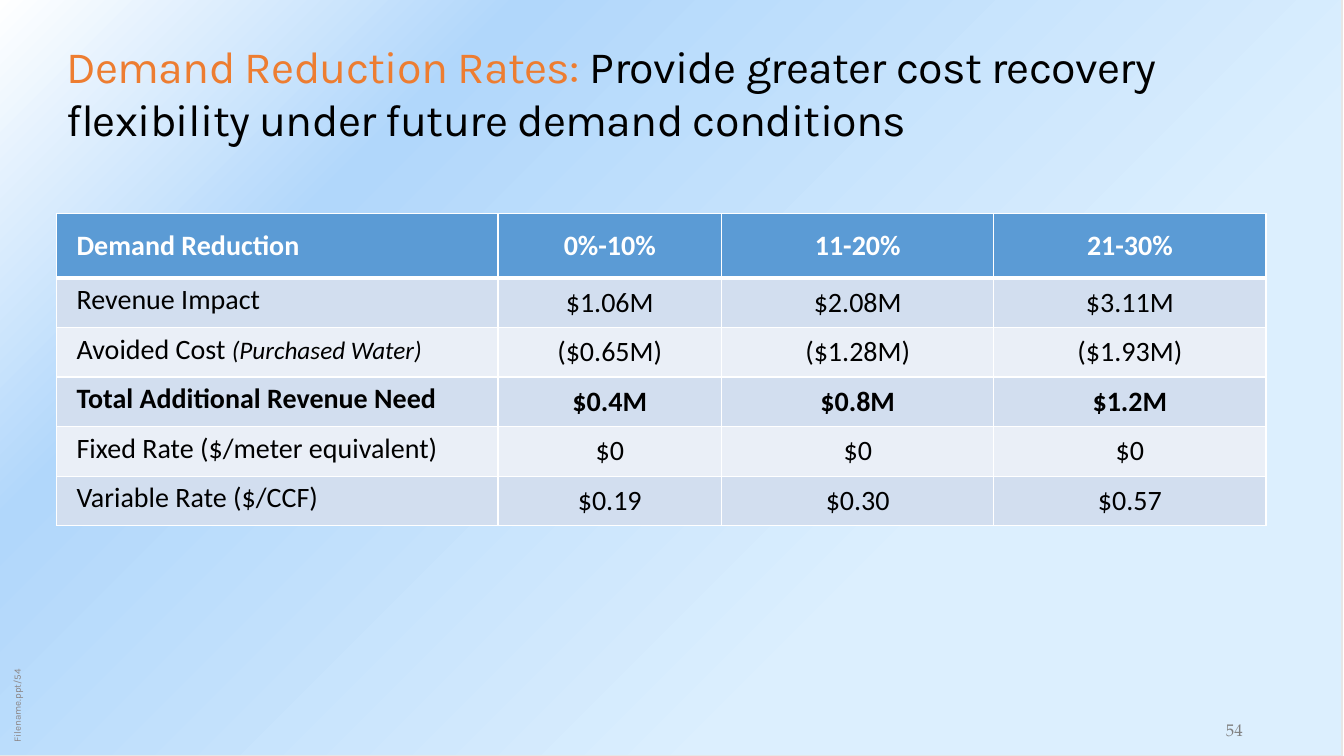
from lxml.etree import SubElement
from pptx import Presentation
from pptx.dml.color import RGBColor
from pptx.enum.shapes import MSO_SHAPE
from pptx.enum.text import MSO_ANCHOR, PP_ALIGN
from pptx.oxml import parse_xml
from pptx.oxml.ns import nsdecls, qn
from pptx.util import Pt

BLACK = "000000"
WHITE = "FFFFFF"
HEADER_BLUE = "5B9BD5"
BANDS = ["D2DEEF", "EAEFF7"]
TABLE_TOP = 152.6
HEADER_HEIGHT = 46
ROW_HEIGHT = 35.4
TOTAL_ROW = 3

LABELS = [
    "Demand Reduction",
    "Revenue Impact",
    "Avoided Cost |(Purchased Water)",
    "Total Additional Revenue Need",
    "Fixed Rate ($/meter equivalent)",
    "Variable Rate ($/CCF)",
]
LOW = ["0%-10%", "$1.06M", "($0.65M)", "$0.4M", "$0", "$0.19"]
MIDDLE = ["11-20%", "$2.08M", "($1.28M)", "$0.8M", "$0", "$0.30"]
HIGH = ["21-30%", "$3.11M", "($1.93M)", "$1.2M", "$0", "$0.57"]


def rgb(color):
    return RGBColor.from_string(color)


def set_font(font, name, size, color):
    font.name = name
    font.size = Pt(size)
    font.color.rgb = rgb(color)


def add_background(slide):
    backdrop = slide.shapes.add_shape(
        MSO_SHAPE.RECTANGLE, Pt(-1.4), Pt(0), Pt(960), Pt(540))
    backdrop.shadow.inherit = False
    backdrop.line.color.rgb = rgb("E7E6E6")
    backdrop.line.width = Pt(0.75)
    stops = "".join(
        f'<a:gs pos="{position * 1000}"><a:srgbClr val="{color}"/></a:gs>'
        for position, color in [(30, "DCEFFE"), (75, "B1D7FB"), (100, WHITE)])
    gradient = parse_xml(
        f'<a:gradFill {nsdecls("a")} rotWithShape="1"><a:gsLst>{stops}</a:gsLst>'
        '<a:path path="circle"><a:fillToRect l="100000" t="100000"/></a:path>'
        '</a:gradFill>')
    backdrop.element.spPr.find(qn("a:prstGeom")).addnext(gradient)


def add_text_frame(slide, left, top, width, height, rotation=0):
    box = slide.shapes.add_textbox(Pt(left), Pt(top), Pt(width), Pt(height))
    box.rotation = rotation
    box.text_frame.word_wrap = True
    return box.text_frame


def add_title(slide, lead, statement):
    frame = add_text_frame(slide, 40.3, 23.8, 880, 84)
    for text, color in [(lead, "ED7D31"), (statement, BLACK)]:
        run = frame.paragraphs[0].add_run()
        run.text = text
        set_font(run.font, "Karla", 32, color)
        run.font._element.set("spc", "-50")


def add_footer(slide, text, place, font, align=PP_ALIGN.LEFT, rotation=0):
    frame = add_text_frame(slide, *place, rotation)
    frame.vertical_anchor = MSO_ANCHOR.BOTTOM
    frame.margin_left = frame.margin_right = Pt(3.6)
    frame.margin_top = frame.margin_bottom = Pt(3.6)
    paragraph = frame.paragraphs[0]
    paragraph.text = text
    paragraph.alignment = align
    set_font(paragraph.font, *font)


def add_borders(cell, bottom_width):
    properties = cell._tc.get_or_add_tcPr()
    for side, width in [("L", 1), ("R", 1), ("T", 1), ("B", bottom_width)]:
        line = SubElement(properties, qn(f"a:ln{side}"), w=str(Pt(width)))
        fill = SubElement(line, qn("a:solidFill"))
        SubElement(fill, qn("a:srgbClr"), val=WHITE)


def fill_cell(cell, text, row, is_label):
    is_header = row == 0
    add_borders(cell, 3 if is_header else 1)
    cell.fill.solid()
    cell.fill.fore_color.rgb = rgb(HEADER_BLUE if is_header else BANDS[(row - 1) % 2])
    padded = is_header or is_label
    cell.margin_left = cell.margin_right = Pt(14.4 if padded else 0)
    cell.margin_top = cell.margin_bottom = Pt(3.6 if padded else 0)
    top_aligned = is_label and not is_header
    cell.vertical_anchor = MSO_ANCHOR.TOP if top_aligned else MSO_ANCHOR.MIDDLE
    paragraph = cell.text_frame.paragraphs[0]
    paragraph.alignment = PP_ALIGN.LEFT if is_label else PP_ALIGN.CENTER
    set_font(paragraph.font, "Calibri", 20, WHITE if is_header else BLACK)
    paragraph.font.bold = row in (0, TOTAL_ROW)
    main_text, _, note = text.partition("|")
    paragraph.add_run().text = main_text
    if note:
        note_run = paragraph.add_run()
        note_run.text = note
        note_run.font.size = Pt(18)
        note_run.font.italic = True


def add_rate_table(slide, left, widths, columns):
    row_count = len(columns[0])
    height = HEADER_HEIGHT + ROW_HEIGHT * (row_count - 1)
    table = slide.shapes.add_table(
        row_count, len(columns), Pt(left), Pt(TABLE_TOP),
        Pt(sum(widths)), Pt(height)).table
    for row in range(row_count):
        table.rows[row].height = Pt(ROW_HEIGHT if row else HEADER_HEIGHT)
    for index, (width, texts) in enumerate(zip(widths, columns)):
        table.columns[index].width = Pt(width)
        for row, text in enumerate(texts):
            fill_cell(table.cell(row, index), text, row, texts is LABELS)


def main():
    deck = Presentation()
    deck.slide_width = Pt(960)
    deck.slide_height = Pt(540)
    slide = deck.slides.add_slide(deck.slide_layouts[6])
    add_background(slide)
    add_footer(slide, "Filename.ppt/54", (-84.2, 429.8, 192.2, 15.8),
               ("Karla", 7, "8B8585"), rotation=270)
    add_footer(slide, "54", (848.9, 510.5, 65.5, 21.6),
               ("TeX Gyre Pagella", 12, "808080"), PP_ALIGN.CENTER)
    add_title(slide, "Demand Reduction Rates: ",
              "Provide greater cost recovery flexibility under future demand conditions")
    left = 40.3
    for widths, columns in [([315.4, 159.8], [LABELS, LOW]),
                            ([194.4], [MIDDLE]),
                            ([194.4], [HIGH])]:
        add_rate_table(slide, left, widths, columns)
        left += sum(widths)
    deck.save("out.pptx")


if __name__ == "__main__":
    main()
